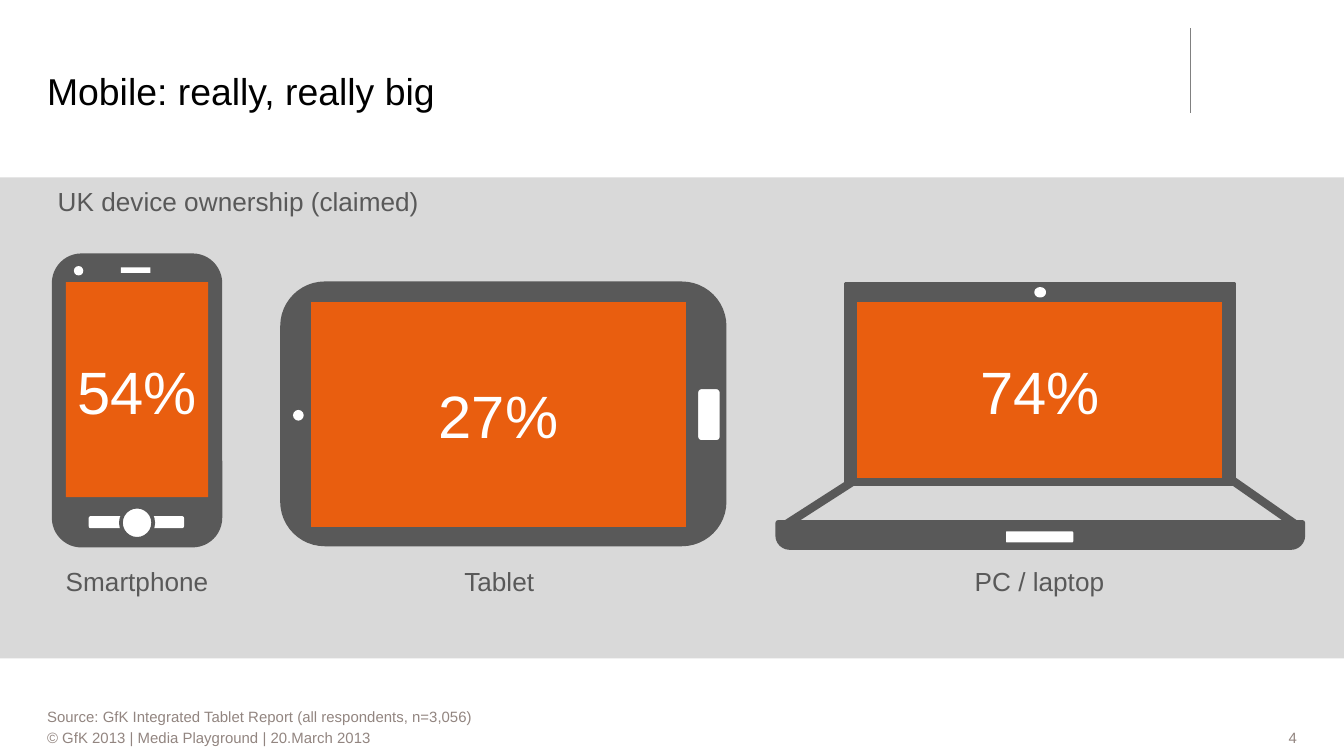
from dataclasses import dataclass

from lxml import etree
from pptx import Presentation
from pptx.dml.color import RGBColor
from pptx.enum.shapes import MSO_CONNECTOR, MSO_SHAPE
from pptx.enum.text import MSO_ANCHOR, MSO_AUTO_SIZE, PP_ALIGN
from pptx.oxml.ns import qn
from pptx.util import Inches, Pt

RECT = MSO_SHAPE.RECTANGLE
ROUND = MSO_SHAPE.ROUNDED_RECTANGLE
OVAL = MSO_SHAPE.OVAL
BASE = MSO_SHAPE.ROUND_2_SAME_RECTANGLE
STRAIGHT = MSO_CONNECTOR.STRAIGHT
LEFT, MID, RIGHT = PP_ALIGN.LEFT, PP_ALIGN.CENTER, PP_ALIGN.RIGHT
CENTER, BOTTOM = MSO_ANCHOR.MIDDLE, MSO_ANCHOR.BOTTOM
NO_FIT = MSO_AUTO_SIZE.NONE


@dataclass(frozen=True)
class Theme:
    font: str = "Arial"
    black: str = "000000"
    white: str = "FFFFFF"
    dark: str = "595959"
    rule: str = "808080"
    band: str = "D9D9D9"
    screen: str = "E95E0F"
    note: str = "928580"
    title: int = 20
    share: int = 32
    label: int = 14
    small: int = 8


def write(frame, text, size, color, font, align=LEFT, anchor=CENTER):
    frame.margin_left = frame.margin_right = 0
    frame.margin_top = frame.margin_bottom = 0
    frame.word_wrap = True
    frame.auto_size = NO_FIT
    frame.vertical_anchor = anchor
    line = frame.paragraphs[0]
    line.alignment = align
    run = line.add_run()
    run.text = text
    run.font.name = font
    run.font.size = Pt(size)
    run.font.color.rgb = RGBColor.from_string(color)


class Deck:
    """Hold the theme and the current slide, and draw each kind of element."""

    def __init__(self, theme):
        self.theme = theme
        self.file = Presentation()
        self.file.slide_width = Inches(10)
        self.file.slide_height = Inches(10) * 9 // 16
        self.slide = self.file.slides.add_slide(self.file.slide_layouts[5])

    def title(self, text, box):
        holder = self.slide.shapes.title
        holder.left, holder.top, holder.width, holder.height = map(Inches, box)
        write(holder.text_frame, text, self.theme.title, self.theme.black,
              self.theme.font, anchor=BOTTOM)

    def shape(self, kind, box, fill, edge=None, width=2.0):
        item = self.slide.shapes.add_shape(kind, *map(Inches, box))
        item.shadow.inherit = False
        item.fill.solid()
        item.fill.fore_color.rgb = RGBColor.from_string(fill)
        if edge:
            item.line.color.rgb = RGBColor.from_string(edge)
            item.line.width = Pt(width)
        else:
            item.line.fill.background()
        return item

    def line(self, ends, color, width):
        item = self.slide.shapes.add_connector(STRAIGHT, *map(Inches, ends))
        item.line.color.rgb = RGBColor.from_string(color)
        item.line.width = Pt(width)
        etree.SubElement(item._element.spPr, qn("a:effectLst"))

    def text(self, text, box, size, color, align=LEFT):
        item = self.slide.shapes.add_textbox(*map(Inches, box))
        write(item.text_frame, text, size, color, self.theme.font, align)

    def share(self, text, left, top):
        self.text(text, (left, top, 1.06, 1.01), self.theme.share,
                  self.theme.white, MID)

    def label(self, text, left, width, top=4.15, align=MID):
        self.text(text, (left, top, width, 0.35), self.theme.label,
                  self.theme.dark, align)

    def note(self, text, left, top, width, align=LEFT):
        item = self.shape(RECT, (left, top, width, 0.16), self.theme.white)
        write(item.text_frame, text, self.theme.small, self.theme.note,
              self.theme.font, align)


def draw_phone(deck):
    look = deck.theme
    deck.shape(ROUND, (0.4, 1.9, 1.24, 2.16), look.dark, look.dark)
    deck.shape(RECT, (0.49, 2.1, 1.06, 1.6), look.screen)
    deck.shape(ROUND, (0.66, 3.84, 0.71, 0.09), look.white)
    deck.shape(OVAL, (0.9, 3.77, 0.24, 0.24), look.white, look.dark)
    deck.shape(OVAL, (0.55, 1.98, 0.07, 0.07), look.white)
    deck.shape(RECT, (0.9, 1.99, 0.22, 0.04), look.white)
    deck.share("54%", 0.49, 2.4)
    deck.label("Smartphone", 0.43, 1.18)


def draw_laptop(deck):
    look = deck.theme
    base = deck.shape(BASE, (5.79, 3.89, 3.9, 0.18), look.dark, look.dark, 3)
    base.adjustments[0] = 0.47
    base.adjustments[1] = 0
    base.rotation = 180
    for ends in ((5.79, 3.94, 6.35, 3.58), (9.65, 3.91, 9.12, 3.54)):
        deck.line(ends, look.dark, 4.5)
    deck.shape(ROUND, (7.47, 3.94, 0.53, 0.11), look.white, look.dark)
    deck.shape(RECT, (6.29, 2.11, 2.89, 1.49), look.dark, look.dark)
    deck.shape(OVAL, (7.71, 2.15, 0.06, 0.05), look.white, look.white)
    deck.shape(RECT, (6.36, 2.23, 2.75, 1.34), look.screen, look.dark)
    deck.share("74%", 7.21, 2.4)
    deck.label("PC / laptop", 6.2, 3.07)


def draw_tablet(deck):
    look = deck.theme
    deck.shape(ROUND, (2.09, 2.1, 3.31, 1.96), look.dark, look.dark, 0.75)
    deck.shape(RECT, (2.31, 2.24, 2.8, 1.69), look.screen, look.dark, 0.75)
    deck.shape(ROUND, (5.19, 2.89, 0.17, 0.39), look.white, look.dark, 0.75)
    deck.shape(OVAL, (2.18, 3.05, 0.08, 0.08), look.white)
    deck.share("27%", 3.18, 2.58)
    deck.label("Tablet", 2.95, 1.53)


def main():
    look = Theme()
    deck = Deck(look)
    deck.title("Mobile: really, really big", (0.35, 0.21, 7.01, 0.63))
    deck.line((8.86, 0.21, 8.86, 0.84), look.rule, 0.75)
    deck.shape(RECT, (0, 1.32, 10, 3.58), look.band)
    deck.label("UK device ownership (claimed)", 0.43, 5.77, 1.32, LEFT)
    draw_phone(deck)
    draw_laptop(deck)
    draw_tablet(deck)
    deck.note("Source: GfK Integrated Tablet Report (all respondents, n=3,056)",
              0.35, 5.25, 7.72)
    deck.note("© GfK 2013 | Media Playground | 20.March 2013", 0.35, 5.41, 7.72)
    deck.note("4", 8.23, 5.41, 1.42, RIGHT)
    deck.file.save("out.pptx")


if __name__ == "__main__":
    main()
